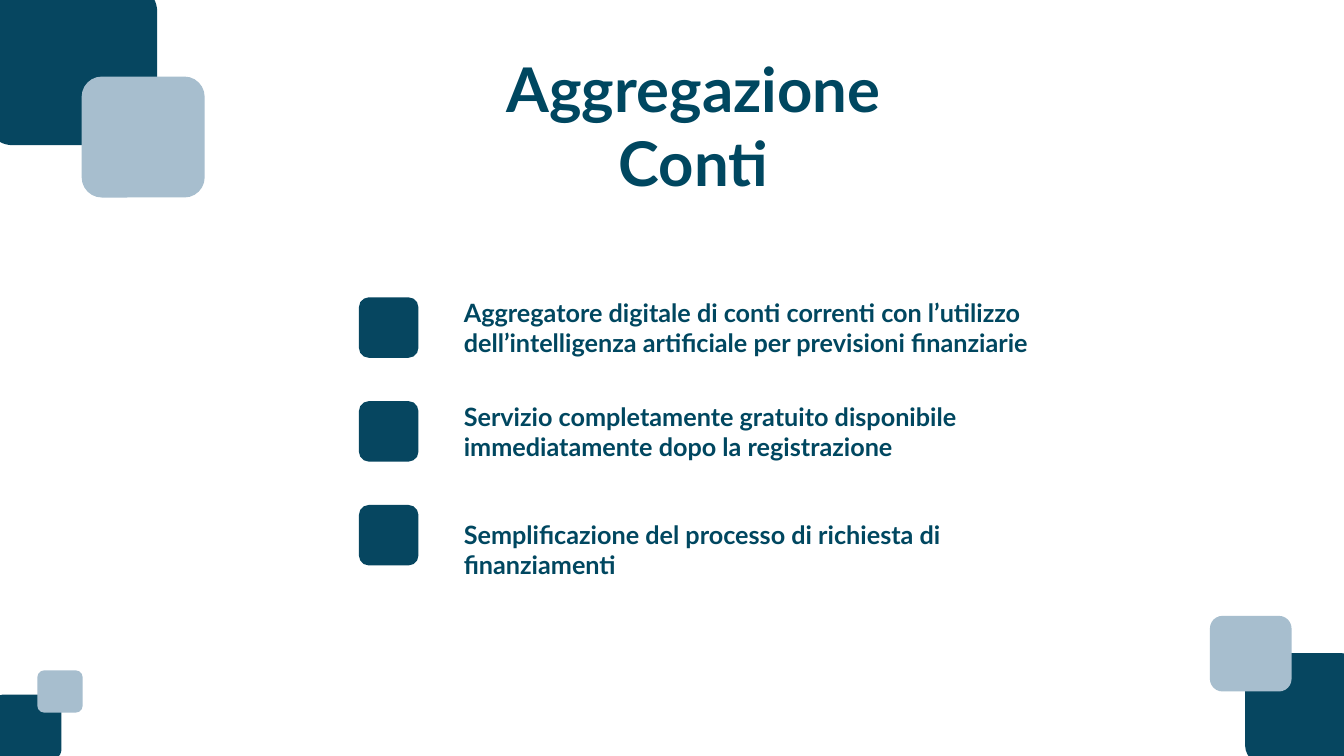
import pptx
import pptx.util
import pptx.dml.color
import pptx.enum.shapes
import pptx.enum.text
from pptx.util import Inches

NAVY = pptx.dml.color.RGBColor(0x06, 0x46, 0x60)
PALE = pptx.dml.color.RGBColor(0xA7, 0xBE, 0xCE)
INK = pptx.dml.color.RGBColor(0x00, 0x47, 0x60)


def add_square(s, left, top, width, height, color):
    sp = s.shapes.add_shape(pptx.enum.shapes.MSO_SHAPE.ROUNDED_RECTANGLE,
                            Inches(left), Inches(top), Inches(width), Inches(height))
    sp.shadow.inherit = False
    sp.fill.solid()
    sp.fill.fore_color.rgb = color
    sp.line.fill.background()


def write_text(sp, text, size, align):
    tf = sp.text_frame
    tf.word_wrap = True
    tf.auto_size = pptx.enum.text.MSO_AUTO_SIZE.NONE
    tf.vertical_anchor = pptx.enum.text.MSO_ANCHOR.TOP
    tf.margin_left = tf.margin_right = Inches(0.07)
    tf.margin_top = tf.margin_bottom = Inches(0.03)
    p = tf.paragraphs[0]
    p.alignment = align
    r = p.add_run()
    r.text = text
    r.font.name = "Lato"
    r.font.size = pptx.util.Pt(size)
    r.font.bold = True
    r.font.color.rgb = INK


prs = pptx.Presentation()
prs.slide_width = Inches(13.33)
prs.slide_height = Inches(7.5)
s = prs.slides.add_slide(prs.slide_layouts[5])

title = s.shapes.title
title.left, title.top = Inches(4.2), Inches(0.48)
title.width, title.height = Inches(5.36), Inches(1.53)
write_text(title, "Aggregazione Conti", 44, pptx.enum.text.PP_ALIGN.CENTER)

corner_squares = [
    (12.35, 6.48, 1.14, 1.1, NAVY),
    (-0.14, -0.15, 1.7, 1.59, NAVY),
    (12, 6.11, 0.81, 0.75, PALE),
    (0.81, 0.76, 1.22, 1.2, PALE),
    (-0.07, 6.89, 0.68, 0.65, NAVY),
    (0.37, 6.65, 0.45, 0.42, PALE),
]
for square in corner_squares:
    add_square(s, *square)

benefits = [
    (2.92, 6.46, "Aggregatore digitale di conti correnti con l’utilizzo "
     "dell’intelligenza artificiale per previsioni finanziarie"),
    (3.95, 6.05, "Servizio completamente gratuito disponibile "
     "immediatamente dopo la registrazione"),
    (5.12, 6.05, "Semplificazione del processo di richiesta di finanziamenti"),
]
for i, (top, width, text) in enumerate(benefits):
    add_square(s, 3.56, 2.95 + 1.03 * i, 0.59, 0.6, NAVY)
    sp = s.shapes.add_textbox(Inches(4.53), Inches(top), Inches(width), Inches(0.67))
    write_text(sp, text, 18, pptx.enum.text.PP_ALIGN.LEFT)

prs.save("out.pptx")
